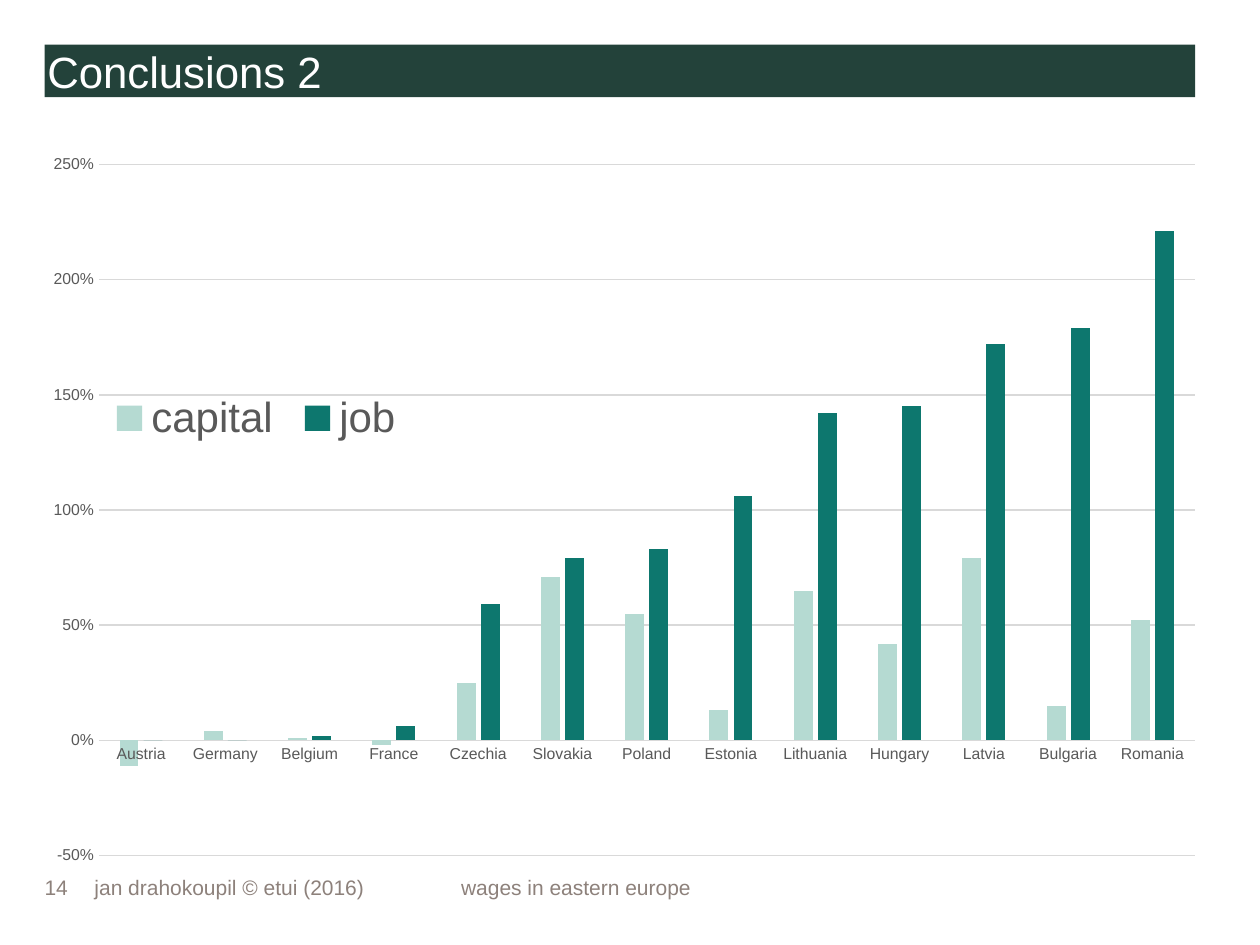
"""Build the "Conclusions 2" slide with its capital and job column chart."""
from lxml.etree import SubElement
from pptx import Presentation
from pptx.chart.data import CategoryChartData
from pptx.dml.color import RGBColor
from pptx.enum.chart import XL_CHART_TYPE as ChartType
from pptx.enum.chart import XL_LEGEND_POSITION as LegendPosition
from pptx.enum.chart import XL_TICK_MARK as TickMark
from pptx.enum.text import MSO_ANCHOR as Anchor
from pptx.enum.text import MSO_AUTO_SIZE as AutoSize
from pptx.enum.text import PP_ALIGN as Align
from pptx.oxml.ns import qn
from pptx.util import Pt


def style_font(font, size, color):
    font.name = "Arial"
    font.size = Pt(size)
    font.bold = False
    font.color.rgb = RGBColor.from_string(color)


def place_in_chart(element, index, left, top, width, height, inner=False):
    for old_layout in element.findall(qn("c:layout")):
        element.remove(old_layout)
    layout = SubElement(element, qn("c:layout"))
    element.insert(index, layout)
    manual = SubElement(layout, qn("c:manualLayout"))
    settings = [("layoutTarget", "inner")] if inner else []
    settings += [("xMode", "edge"), ("yMode", "edge")]
    settings += [("x", left), ("y", top), ("w", width), ("h", height)]
    for tag, value in settings:
        SubElement(manual, qn(f"c:{tag}")).set("val", str(value))


presentation = Presentation()
presentation.slide_width, presentation.slide_height = Pt(720), Pt(540)
slide = presentation.slides.add_slide(presentation.slide_layouts[5])

title = slide.shapes.title
title.left, title.top, title.width, title.height = Pt(25.5), Pt(25.5), Pt(657.5), Pt(30)
title.fill.solid()
title.fill.fore_color.rgb = RGBColor.from_string("23423A")
frame = title.text_frame
frame.text = "Conclusions 2"
frame.auto_size = AutoSize.NONE
frame.vertical_anchor = Anchor.MIDDLE
frame.margin_left = frame.margin_right = Pt(1.5)
frame.margin_top = frame.margin_bottom = 0
frame.paragraphs[0].alignment = Align.LEFT
style_font(frame.paragraphs[0].runs[0].font, 25, "FFFFFF")

footers = [
    ("jan drahokoupil © etui (2016)", 54, 204.5),
    ("wages in eastern europe", 263.5, 357),
    ("14", 25.5, 28),
]
for text, left, width in footers:
    frame = slide.shapes.add_textbox(Pt(left), Pt(489), Pt(width), Pt(25)).text_frame
    frame.text = text
    frame.word_wrap = True
    frame.vertical_anchor = Anchor.BOTTOM
    frame.margin_left = frame.margin_right = frame.margin_top = frame.margin_bottom = 0
    style_font(frame.paragraphs[0].runs[0].font, 12, "8D817B")

chart_data = CategoryChartData(number_format="0%")
chart_data.categories = [
    "Austria", "Germany", "Belgium", "France", "Czechia", "Slovakia", "Poland",
    "Estonia", "Lithuania", "Hungary", "Latvia", "Bulgaria", "Romania",
]
chart_data.add_series("capital", [
    -0.11, 0.04, 0.01, -0.02, 0.25, 0.71, 0.55, 0.13, 0.65, 0.42, 0.79, 0.15, 0.52,
])
chart_data.add_series("job", [
    0, 0, 0.02, 0.06, 0.59, 0.79, 0.83, 1.06, 1.42, 1.45, 1.72, 1.79, 2.21,
])
chart = slide.shapes.add_chart(
    ChartType.COLUMN_CLUSTERED, Pt(16.5), Pt(81.5), Pt(666.5), Pt(420), chart_data
).chart
chart.has_title = False
style_font(chart.font, 10, "000000")

plot = chart.plots[0]
plot.vary_by_categories = False
plot.gap_width, plot.overlap = 219, -27
for series, color in zip(plot.series, ["B5DAD2", "0D776E"]):
    series.invert_if_negative = False
    series.format.fill.solid()
    series.format.fill.fore_color.rgb = RGBColor.from_string(color)

category_axis, value_axis = chart.category_axis, chart.value_axis
for axis in (category_axis, value_axis):
    axis.major_tick_mark = axis.minor_tick_mark = TickMark.NONE
    style_font(axis.tick_labels.font, 9, "595959")
value_axis.minimum_scale, value_axis.maximum_scale = -0.5, 2.5
value_axis.major_unit = 0.5
value_axis.tick_labels.number_format = "0%"
value_axis.tick_labels.number_format_is_linked = False
value_axis.format.line.fill.background()
value_axis.has_major_gridlines = True
for line in (category_axis.format.line, value_axis.major_gridlines.format.line):
    line.width = Pt(0.75)
    line.color.rgb = RGBColor.from_string("D9D9D9")

chart.has_legend = True
legend = chart.legend
legend.position = LegendPosition.BOTTOM
legend.include_in_layout = False
style_font(legend.font, 24, "595959")
place_in_chart(legend._element, 1, 0.06, 0.33, 0.27, 0.09)
plot_area = chart._chartSpace.chart.plotArea
place_in_chart(plot_area, 0, 0.06, 0.03, 0.94, 0.94, inner=True)

presentation.save("out.pptx")
